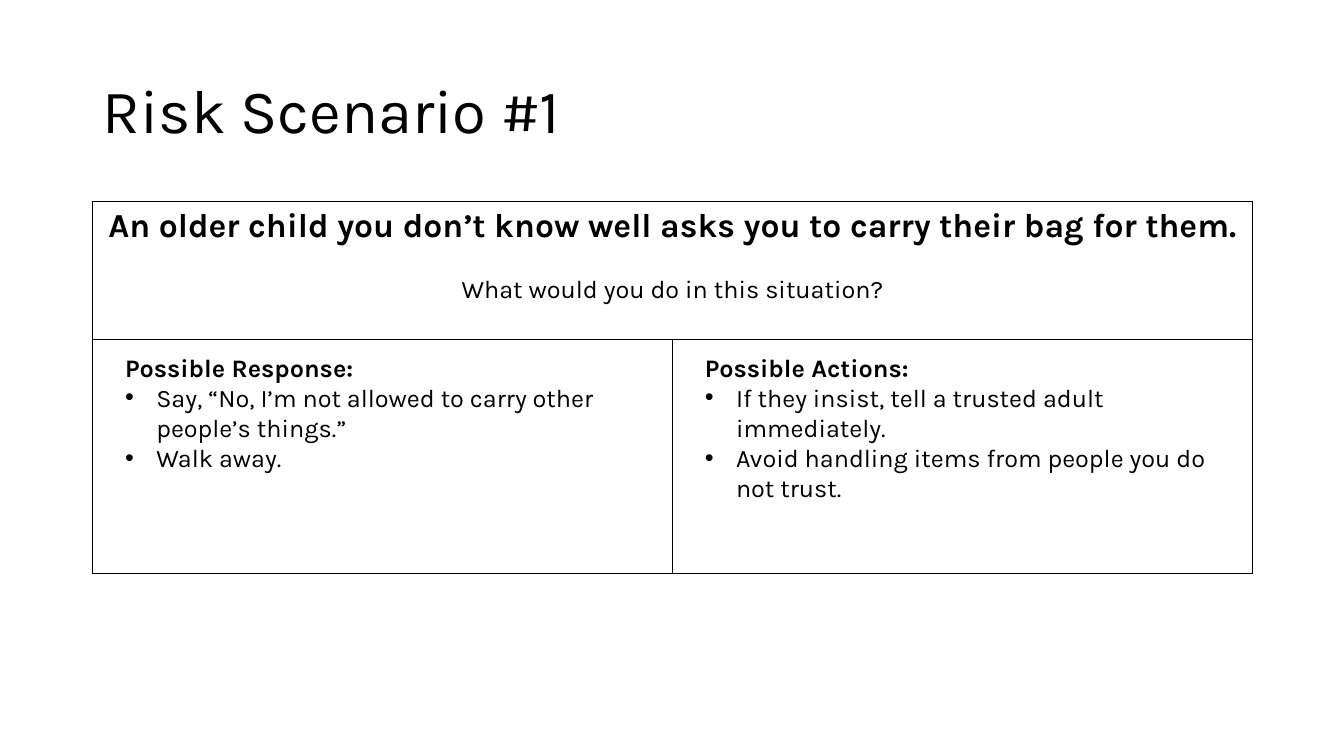
from pptx import Presentation
from pptx.dml.color import RGBColor
from pptx.enum.text import MSO_ANCHOR, MSO_AUTO_SIZE, PP_ALIGN
from pptx.oxml import parse_xml
from pptx.oxml.ns import nsdecls
from pptx.util import Inches, Pt

FONT = "Karla"
BLACK = RGBColor(0, 0, 0)
LEFT, WIDTH = 0.92, 11.5
ROWS = (1.37, 2.32)
INDENT = 0.31

SCENARIO = "An older child you don’t know well asks you to carry their bag for them."
QUESTION = "What would you do in this situation?"
ANSWERS = [
    ("Possible Response:", [
        "Say, “No, I’m not allowed to carry other people’s things.”",
        "Walk away.",
    ]),
    ("Possible Actions:", [
        "If they insist, tell a trusted adult immediately.",
        "Avoid handling items from people you do not trust.",
    ]),
]


def place(shape, left, top, width, height):
    shape.left, shape.top = Inches(left), Inches(top)
    shape.width, shape.height = Inches(width), Inches(height)


def style(para, size, bold=False):
    font = para.font
    font.name, font.size, font.bold = FONT, Pt(size), bold
    font.color.rgb = BLACK


def set_bullet(para, shown):
    props = para._p.get_or_add_pPr()
    indent = Inches(INDENT) if shown else 0
    props.set("marL", str(indent))
    props.set("indent", str(-indent))
    if shown:
        props.append(parse_xml(f'<a:buFont {nsdecls("a")} typeface="Arial"/>'))
        props.append(parse_xml(f'<a:buChar {nsdecls("a")} char="•"/>'))
    else:
        props.append(parse_xml(f'<a:buNone {nsdecls("a")}/>'))


def set_borders(cell):
    props = cell._tc.get_or_add_tcPr()
    for side in ("lnL", "lnR", "lnT", "lnB"):
        props.append(parse_xml(
            f'<a:{side} {nsdecls("a")} w="{Pt(1)}"><a:solidFill>'
            f'<a:srgbClr val="{BLACK}"/></a:solidFill></a:{side}>'))


def add_title(title, left, top, width, height):
    place(title, left, top, width, height)
    frame = title.text_frame
    frame.text = "Risk Scenario #1"
    frame.vertical_anchor = MSO_ANCHOR.MIDDLE
    para = frame.paragraphs[0]
    para.alignment = PP_ALIGN.LEFT
    para.line_spacing = 0.9
    style(para, 44)


def add_grid(slide, left, top, width):
    """Draw the table with the scenario above two answer cells."""
    graphic = slide.shapes.add_table(
        2, 2, Inches(left), Inches(top), Inches(width), Inches(sum(ROWS)))
    slide.shapes.title._element.addnext(graphic._element)
    table = graphic.table
    table.first_row = table.horz_banding = False
    for row, height in zip(table.rows, ROWS):
        row.height = Inches(height)
    for cell in table.iter_cells():
        set_borders(cell)
        cell.fill.background()
    head = table.cell(0, 0)
    head.merge(table.cell(0, 1))
    frame = head.text_frame
    frame.text = f"{SCENARIO}\n{QUESTION}"
    first, second = frame.paragraphs
    first.alignment = second.alignment = PP_ALIGN.CENTER
    second.space_before = Pt(21)
    style(first, 24, True)
    style(second, 18)


def add_answer(body, heading, points, left, top, width, height):
    place(body, left, top, width, height)
    frame = body.text_frame
    frame.text = "\n".join([heading, *points])
    frame.auto_size = MSO_AUTO_SIZE.SHAPE_TO_FIT_TEXT
    frame.vertical_anchor = MSO_ANCHOR.TOP
    for i, para in enumerate(frame.paragraphs):
        set_bullet(para, i > 0)
        para.space_before = Pt(0)
        style(para, 18, i == 0)


def add_scenario(deck):
    slide = deck.slides.add_slide(deck.slide_layouts.get_by_name("Two Content"))
    add_title(slide.shapes.title, LEFT, 0.4, WIDTH, 1.45)
    add_grid(slide, LEFT, 2, WIDTH)
    half = WIDTH / 2
    for i, (heading, points) in enumerate(ANSWERS):
        add_answer(slide.placeholders[i + 1], heading, points,
                   LEFT + i * half + 0.22, 3.44, half - 0.22, 1.62)


def main():
    deck = Presentation()
    deck.slide_width, deck.slide_height = Inches(13.33), Inches(7.5)
    add_scenario(deck)
    deck.save("out.pptx")


if __name__ == "__main__":
    main()
